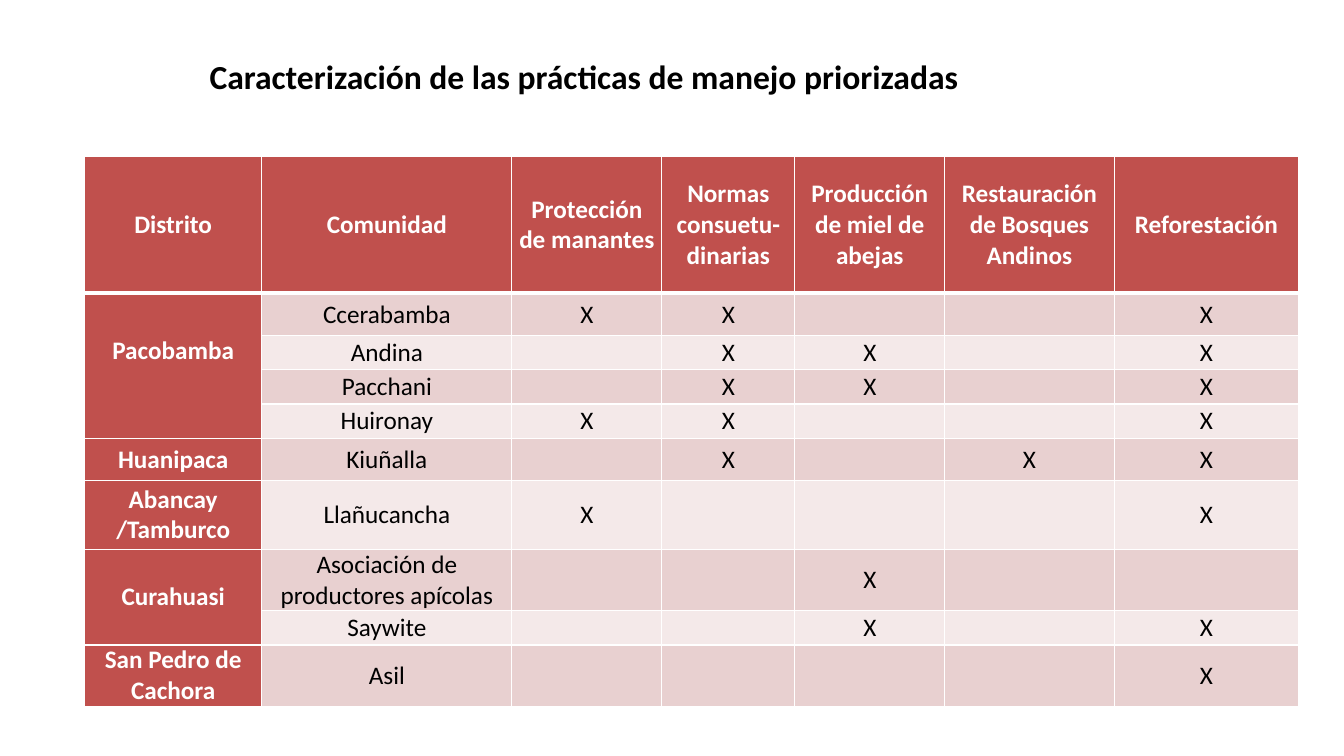
from dataclasses import dataclass

from lxml import etree
from pptx import Presentation
from pptx.dml.color import RGBColor
from pptx.enum import text as txt
from pptx.oxml import ns
from pptx.util import Cm, Pt

RED = RGBColor(0xC0, 0x50, 0x4D)
ROSE = RGBColor(0xE8, 0xD0, 0xD0)
PALE_ROSE = RGBColor(0xF4, 0xE9, 0xE9)
WHITE = RGBColor(0xFF, 0xFF, 0xFF)
BLACK = RGBColor(0, 0, 0)
FONT = "Calibri"


@dataclass
class Community:
    name: str
    marks: str  # one character per practice, X where it applies
    height: float


@dataclass
class District:
    name: str
    communities: list[Community]
    bottom_margin: float = 0


@dataclass
class Column:
    heading: str
    width: float


COLUMNS = [
    Column("Distrito", 4.47),
    Column("Comunidad", 6.3),
    Column("Protección de manantes", 3.78),
    Column("Normas consuetu-dinarias", 3.35),
    Column("Producción de miel de abejas", 3.78),
    Column("Restauración de Bosques Andinos", 4.27),
    Column("Reforestación", 4.65),
]
HEADING_HEIGHT = 3.45
DISTRICTS = [
    District("Pacobamba", [
        Community("Ccerabamba", "XX--X", 1.07),
        Community("Andina", "-XX-X", 0.86),
        Community("Pacchani", "-XX-X", 0.86),
        Community("Huironay", "XX--X", 0.86),
    ], bottom_margin=0.77),
    District("Huanipaca", [Community("Kiuñalla", "-X-XX", 1.07)]),
    District("Abancay\n/Tamburco", [Community("Llañucancha", "X---X", 1.73)]),
    District("Curahuasi", [
        Community("Asociación de productores apícolas", "--X--", 1.52),
        Community("Saywite", "--X-X", 0.86),
    ]),
    District("San Pedro de Cachora", [Community("Asil", "----X", 1.47)]),
]


def write(frame, content: str, *, size: float = 18, color: RGBColor = BLACK,
          bold: bool = False) -> None:
    """Put centred, formatted text into a text frame."""
    frame.text = content
    for paragraph in frame.paragraphs:
        paragraph.alignment = txt.PP_ALIGN.CENTER
        paragraph.font.size = Pt(size)
        for run in paragraph.runs:
            run.font.name = FONT
            run.font.size = Pt(size)
            run.font.bold = bold
            run.font.color.rgb = color


def add_borders(cell, top: float, bottom: float) -> None:
    """Draw white borders, with widths in points."""
    properties = cell._tc.get_or_add_tcPr()
    for side, width in (("L", 1), ("R", 1), ("T", top), ("B", bottom)):
        line = etree.SubElement(properties, ns.qn(f"a:ln{side}"), w=str(Pt(width)))
        fill = etree.SubElement(line, ns.qn("a:solidFill"))
        etree.SubElement(fill, ns.qn("a:srgbClr"), val=str(WHITE))


def fill_cell(cell, content: str, background: RGBColor, *, top: float = 1,
              bottom: float = 1, bottom_margin: float = 0) -> None:
    add_borders(cell, top, bottom)
    cell.fill.solid()
    cell.fill.fore_color.rgb = background
    cell.margin_left = cell.margin_right = Cm(0.13)
    cell.margin_top, cell.margin_bottom = 0, Cm(bottom_margin)
    cell.vertical_anchor = txt.MSO_ANCHOR.MIDDLE
    is_heading = background == RED
    write(cell.text_frame, content, color=WHITE if is_heading else BLACK,
          bold=is_heading)


def add_title(slide) -> None:
    title = slide.shapes.title
    title.left, title.top = Cm(1.5), Cm(0.33)
    title.width, title.height = Cm(26.44), Cm(3.18)
    title.text_frame.vertical_anchor = txt.MSO_ANCHOR.MIDDLE
    write(title.text_frame, "Caracterización de las prácticas de manejo priorizadas",
          size=24, bold=True)


def add_practices_table(slide) -> None:
    heights = [HEADING_HEIGHT] + [c.height for d in DISTRICTS for c in d.communities]
    practices = slide.shapes.add_table(
        len(heights), len(COLUMNS), Cm(2.13), Cm(3.94),
        Cm(sum(c.width for c in COLUMNS)), Cm(sum(heights))).table
    practices.first_row = practices.horz_banding = False
    for row, height in zip(practices.rows, heights):
        row.height = Cm(height)

    # Headings
    for index, column in enumerate(COLUMNS):
        practices.columns[index].width = Cm(column.width)
        fill_cell(practices.cell(0, index), column.heading, RED, bottom=3)

    # Districts, each with its communities in banded rows
    row_index = 1
    for district in DISTRICTS:
        first = row_index
        for community in district.communities:
            top = 3 if row_index == 1 else 1
            band = ROSE if row_index % 2 else PALE_ROSE
            fill_cell(practices.cell(row_index, 0),
                      district.name if row_index == first else "", RED, top=top,
                      bottom_margin=district.bottom_margin if row_index == first else 0)
            values = [community.name, *community.marks.replace("-", " ")]
            for index, value in enumerate(values, start=1):
                fill_cell(practices.cell(row_index, index), value.strip(), band, top=top)
            row_index += 1
        if row_index - first > 1:
            practices.cell(first, 0).merge(practices.cell(row_index - 1, 0))


def main() -> None:
    deck = Presentation()
    deck.slide_width, deck.slide_height = Cm(33.87), Cm(19.05)
    slide = deck.slides.add_slide(deck.slide_layouts.get_by_name("Title Only"))
    add_title(slide)
    add_practices_table(slide)
    deck.save("out.pptx")


if __name__ == "__main__":
    main()
